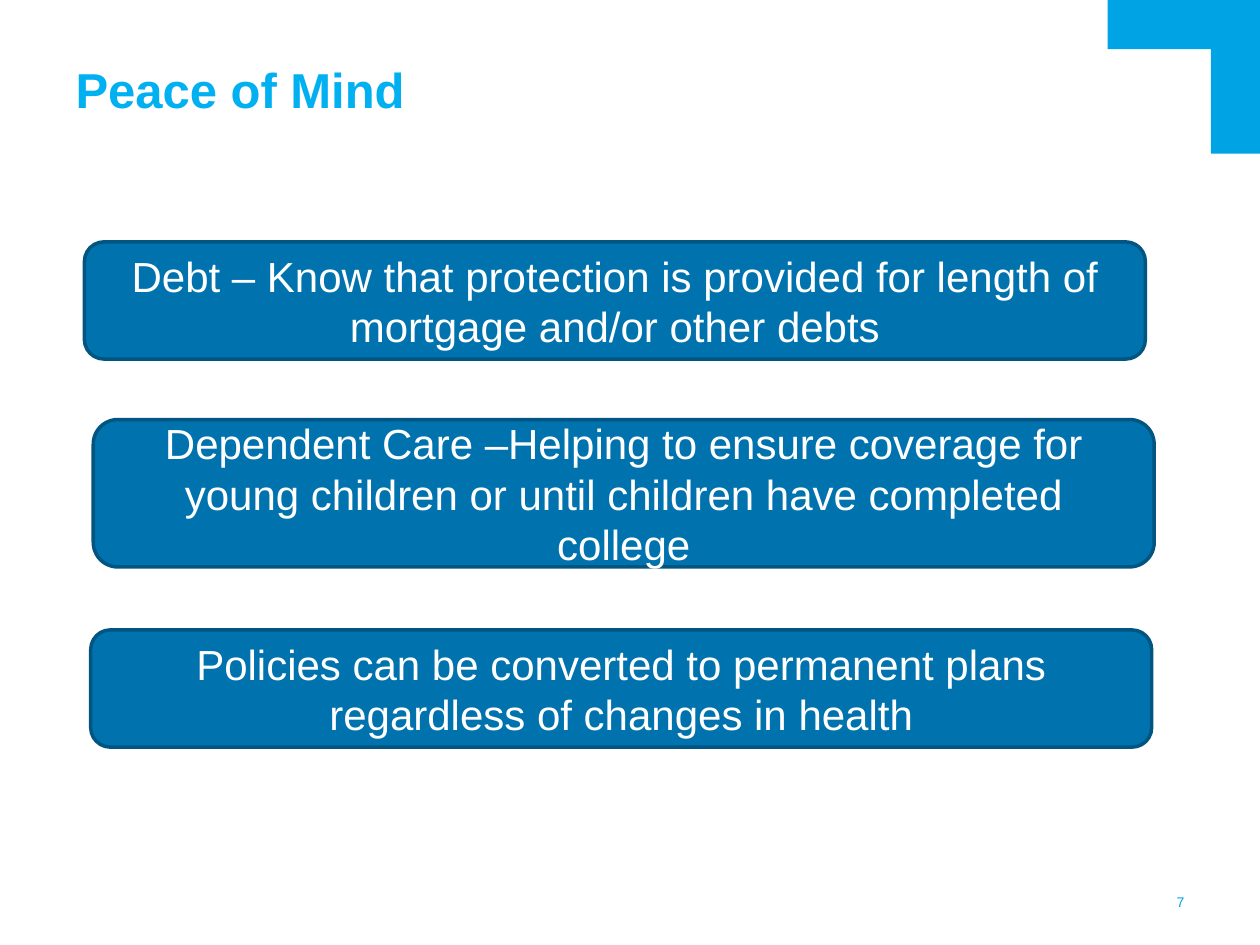
import pptx
import pptx.util
import pptx.dml.color
import pptx.enum.shapes
import pptx.enum.text
from dataclasses import dataclass

Inches = pptx.util.Inches
Shape = pptx.enum.shapes.MSO_SHAPE
Align = pptx.enum.text.PP_ALIGN
Anchor = pptx.enum.text.MSO_ANCHOR


@dataclass(frozen=True)
class Theme:
    font: str = "Arial"
    title: str = "00B0F0"
    accent: str = "00A4E4"
    card: str = "0073AE"
    edge: str = "005581"
    light: str = "FFFFFF"
    head: int = 28
    body: int = 24
    small: int = 8


THEME = Theme()

# Left, top, height and wording of each card
CARDS = [
    (0.67, 1.92, 0.93, "Debt – Know that protection is provided for length of "
     "mortgage and/or other debts"),
    (0.74, 3.33, 1.17, "Dependent Care –Helping to ensure coverage for "
     "young children or until children have completed college"),
    (0.72, 5, 0.93, "Policies can be converted to permanent plans "
     "regardless of changes in health"),
]


def rgb(code):
    return pptx.dml.color.RGBColor.from_string(code)


def write(frame, text, size, color, align, anchor, bold=False):
    frame.text = text
    frame.word_wrap = True
    frame.vertical_anchor = anchor
    para = frame.paragraphs[0]
    para.alignment = align
    font = para.font
    font.name = THEME.font
    font.size = pptx.util.Pt(size)
    font.bold = bold
    font.color.rgb = rgb(color)


def trim(frame):
    frame.margin_left = frame.margin_right = 0
    frame.margin_top = frame.margin_bottom = 0


def block(slide, kind, box, fill):
    shape = slide.shapes.add_shape(kind, *map(Inches, box))
    shape.shadow.inherit = False
    shape.fill.solid()
    shape.fill.fore_color.rgb = rgb(fill)
    shape.line.fill.background()
    return shape


def corner(slide):
    for box in [(8.79, 0, 1.21, 0.39), (9.61, 0, 0.39, 1.22)]:
        block(slide, Shape.RECTANGLE, box, THEME.accent)


def title(slide, text):
    shape = slide.shapes.title
    shape.left, shape.top = Inches(0.6), Inches(0.6)
    shape.width, shape.height = Inches(8.8), Inches(0.34)
    trim(shape.text_frame)
    write(shape.text_frame, text, THEME.head, THEME.title,
          Align.LEFT, Anchor.BOTTOM, bold=True)


def card(slide, left, top, height, text):
    shape = block(slide, Shape.ROUNDED_RECTANGLE,
                  (left, top, 8.42, height), THEME.card)
    shape.line.color.rgb = rgb(THEME.edge)
    shape.line.width = pptx.util.Pt(2)
    write(shape.text_frame, text, THEME.body, THEME.light,
          Align.CENTER, Anchor.MIDDLE)


def number(slide, text):
    box = slide.shapes.add_textbox(*map(Inches, (9.09, 7.09, 0.31, 0.14)))
    trim(box.text_frame)
    write(box.text_frame, text, THEME.small, THEME.accent,
          Align.RIGHT, Anchor.MIDDLE)


def main():
    deck = pptx.Presentation()
    deck.slide_width, deck.slide_height = Inches(10), Inches(7.5)
    slide = deck.slides.add_slide(deck.slide_layouts[5])

    # Page frame
    number(slide, "7")
    corner(slide)

    # Content
    title(slide, "Peace of Mind")
    for item in CARDS:
        card(slide, *item)

    deck.save("out.pptx")


if __name__ == "__main__":
    main()
